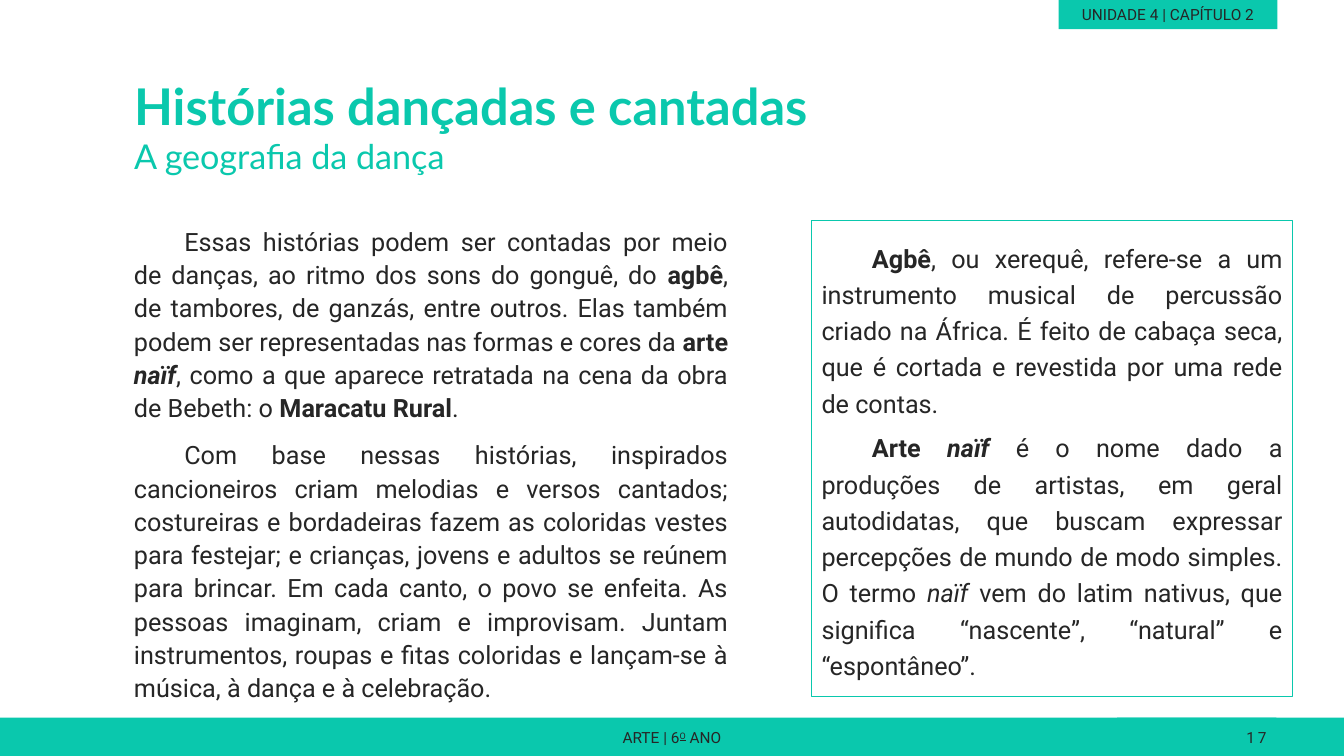
from pptx import Presentation
from pptx.dml.color import RGBColor
from pptx.enum.shapes import MSO_SHAPE
from pptx.enum.text import MSO_ANCHOR, MSO_AUTO_SIZE, PP_ALIGN
from pptx.util import Inches, Pt

COLORS = {"accent": "0AC8AD", "text": "262626"}
BOLD = {"bold": True}
ITALIC = {"italic": True}
BOLD_ITALIC = {"bold": True, "italic": True}
SMALL = {"size": Pt(11)}
BODY = {"size": Pt(18)}

HISTORIES = [
    [
        ("Essas histórias podem ser contadas por meio de danças, ao ritmo dos sons do gonguê, do ", {}),
        ("agbê", BOLD),
        (", de tambores, de ganzás, entre outros. Elas também podem ser representadas "
         "nas formas e cores da ", {}),
        ("arte ", BOLD),
        ("naïf", BOLD_ITALIC),
        (", como a que aparece retratada na cena da obra de Bebeth: o ", {}),
        ("Maracatu Rural", BOLD),
        (".", {}),
    ],
    [
        ("Com base nessas histórias, inspirados cancioneiros criam melodias e versos cantados; "
         "costureiras e bordadeiras fazem as coloridas vestes para festejar; e crianças, jovens "
         "e adultos se reúnem para brincar. Em cada canto, o povo se enfeita. As pessoas imaginam, "
         "criam e improvisam. Juntam instrumentos, roupas e fitas coloridas e lançam-se à música, "
         "à dança e à celebração.", {}),
    ],
]
GLOSSARY = [
    [
        ("Agbê", BOLD),
        (", ou xerequê, refere-se a um instrumento musical de percussão criado na África. "
         "É feito de cabaça seca, que é cortada e revestida por uma rede de contas.", {}),
    ],
    [
        ("Arte ", BOLD),
        ("naïf ", BOLD_ITALIC),
        ("é o nome dado a produções de artistas, em geral autodidatas, que buscam expressar "
         "percepções de mundo de modo simples. O termo ", {}),
        ("naïf", ITALIC),
        (" vem do latim nativus, que significa “nascente”, “natural” e “espontâneo”.", {}),
    ],
]


def set_values(target, values):
    for name, value in values.items():
        setattr(target, name, value)


def color(name):
    return RGBColor.from_string(COLORS[name])


def add_span(para, text, values, font="Roboto", tint="text"):
    span = para.add_run()
    span.text = text
    set_values(span.font, {"name": font, **values})
    span.font.color.rgb = color(tint)
    return span


def add_box(page, position, fill=None, line=None):
    box = page.shapes.add_shape(MSO_SHAPE.RECTANGLE, *map(Inches, position))
    box.shadow.inherit = False
    for part, name in ((box.fill, fill), (box.line.fill, line)):
        if name:
            part.solid()
            part.fore_color.rgb = color(name)
        else:
            part.background()
    set_values(box.text_frame, {"word_wrap": True, "vertical_anchor": MSO_ANCHOR.MIDDLE})
    return box


def add_label(page, position, text, alignment=PP_ALIGN.CENTER):
    para = add_box(page, position, fill="accent").text_frame.paragraphs[0]
    para.alignment = alignment
    return para, add_span(para, text, SMALL)


def add_title(page, position, lines):
    title = page.shapes.title
    set_values(title, dict(zip(("left", "top", "width", "height"), map(Inches, position))))
    set_values(title.text_frame, {
        "word_wrap": True,
        "auto_size": MSO_AUTO_SIZE.NONE,
        "vertical_anchor": MSO_ANCHOR.BOTTOM,
    })
    para = title.text_frame.paragraphs[0]
    para.alignment = PP_ALIGN.LEFT
    for number, (text, values) in enumerate(lines):
        if number:
            para.add_line_break()
        add_span(para, text, values, "Lato", "accent")


def write_body(frame, paragraphs, line_spacing, space_before):
    for number, spans in enumerate(paragraphs):
        para = frame.add_paragraph() if number else frame.paragraphs[0]
        set_values(para, {
            "alignment": PP_ALIGN.JUSTIFY,
            "line_spacing": line_spacing,
            "space_before": Pt(space_before),
        })
        para._p.get_or_add_pPr().set("indent", str(Inches(0.5)))
        for text, values in spans:
            add_span(para, text, {**BODY, **values})


def main():
    deck = Presentation()
    set_values(deck, {"slide_width": Inches(13.33), "slide_height": Inches(7.5)})
    page = deck.slides.add_slide(deck.slide_layouts[5])

    footer, _ = add_label(page, (0, 7.12, 13.33, 0.4), "ARTE | 6")
    ordinal = add_span(footer, "O", {**SMALL, "underline": True})
    ordinal.font._element.set("baseline", "30000")
    add_span(footer, " ANO", SMALL)
    _, number = add_label(page, (11.08, 7.12, 1.58, 0.4), "17", PP_ALIGN.RIGHT)
    number.font._element.set("spc", "200")
    add_label(page, (10.5, 0, 2.17, 0.29), "UNIDADE 4 | CAPÍTULO 2")

    add_title(page, (1.23, 0.36, 7.65, 1.44), [
        ("Histórias dançadas e cantadas", {"size": Pt(36.1), "bold": True}),
        ("A geografia da dança", {"size": Pt(24.4), "bold": False}),
    ])

    story = page.shapes.add_textbox(*map(Inches, (1.23, 2.05, 6.09, 4.97)))
    set_values(story.text_frame, {"word_wrap": True, "vertical_anchor": MSO_ANCHOR.BOTTOM})
    write_body(story.text_frame, HISTORIES, 1.1, 10)

    glossary = add_box(page, (8.05, 2.19, 4.77, 4.72), line="accent")
    glossary.line.width = Pt(0.75)
    write_body(glossary.text_frame, GLOSSARY, 1.2, 6)

    deck.save("out.pptx")


if __name__ == "__main__":
    main()
